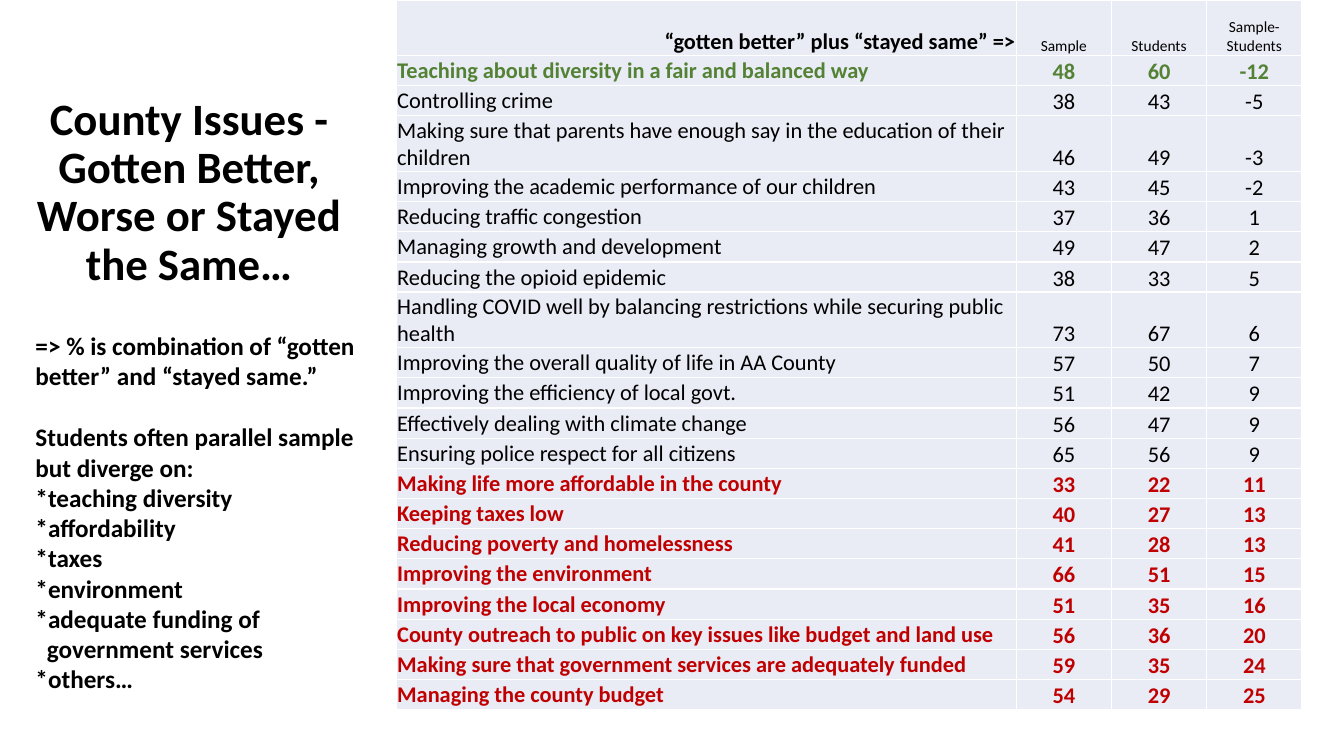
from lxml import etree
from pptx import Presentation
from pptx.dml.color import RGBColor as RGB
from pptx.enum.text import MSO_ANCHOR as Anchor, MSO_AUTO_SIZE as Fit, PP_ALIGN as Align
from pptx.oxml import parse_xml
from pptx.oxml.ns import nsdecls, qn
from pptx.util import Cm, Pt

HUES = {"text": "000000", "better": "548235", "worse": "C00000",
        "cell": "E9EBF5", "edge": "FFFFFF"}
FACE = "Calibri"


def write(para, text, size, hue="text", bold=True, align=Align.LEFT):
    """Put one formatted run of text into a paragraph."""
    run = para.add_run()
    run.text = text
    para.alignment = align
    for name, value in {"name": FACE, "size": Pt(size), "bold": bold}.items():
        setattr(run.font, name, value)
    run.font.color.rgb = RGB.from_string(HUES[hue])


def place(shape, left, top, width, height):
    """Move and size a shape, in centimetres."""
    spot = {"left": left, "top": top, "width": width, "height": height}
    for name, value in spot.items():
        setattr(shape, name, Cm(value))


deck = Presentation()
deck.slide_width, deck.slide_height = Cm(33.87), Cm(19.05)
slide = deck.slides.add_slide(deck.slide_layouts[1])

# Title
title = slide.shapes.title
place(title, 0.28, 1.02, 8.97, 7.7)
frame = title.text_frame
frame.auto_size = Fit.NONE
frame.vertical_anchor = Anchor.MIDDLE
frame.paragraphs[0].line_spacing = 0.9
write(frame.paragraphs[0], "County Issues - Gotten Better, Worse or Stayed the Same…",
      32, align=Align.CENTER)

# Table: issue, sample and students; the last column is their difference
issues = [
    ("Teaching about diversity in a fair and balanced way", 48, 60),
    ("Controlling crime", 38, 43),
    ("Making sure that parents have enough say in the education of their children", 46, 49),
    ("Improving the academic performance of our children", 43, 45),
    ("Reducing traffic congestion", 37, 36),
    ("Managing growth and development", 49, 47),
    ("Reducing the opioid epidemic", 38, 33),
    ("Handling COVID well by balancing restrictions while securing public health", 73, 67),
    ("Improving the overall quality of life in AA County", 57, 50),
    ("Improving the efficiency of local govt.", 51, 42),
    ("Effectively dealing with climate change", 56, 47),
    ("Ensuring police respect for all citizens", 65, 56),
    ("Making life more affordable in the county", 33, 22),
    ("Keeping taxes low", 40, 27),
    ("Reducing poverty and homelessness", 41, 28),
    ("Improving the environment", 66, 51),
    ("Improving the local economy", 51, 35),
    ("County outreach to public on key issues like budget and land use", 56, 36),
    ("Making sure that government services are adequately funded", 59, 35),
    ("Managing the county budget", 54, 29),
]
heads = ["“gotten better” plus “stayed same” =>", "Sample", "Students", "Sample-Students"]
rows = [heads] + [[name, own, peer, own - peer] for name, own, peer in issues]
widths = [15.62, 2.4, 2.4, 2.4]
tall = {0, 3, 8}

grid = slide.shapes.add_table(len(rows), len(heads), Cm(9.99), Cm(0),
                              Cm(sum(widths)), Cm(17.88)).table
grid.first_row = grid.horz_banding = False
for col, width in zip(grid.columns, widths):
    col.width = Cm(width)

insets = {"margin_left": Cm(0.02), "margin_right": Cm(0.02),
          "margin_top": Cm(0.02), "margin_bottom": Cm(0)}
for r, row in enumerate(rows):
    grid.rows[r].height = Cm(1.4 if r in tall else 0.76)
    hue = "text"
    if r and abs(row[-1]) > 10:
        hue = "worse" if row[-1] > 0 else "better"
    for c, value in enumerate(row):
        cell = grid.cell(r, c)
        for name, inset in insets.items():
            setattr(cell, name, inset)
        cell.vertical_anchor = Anchor.MIDDLE if r and not c else Anchor.BOTTOM
        props = cell._tc.get_or_add_tcPr()
        for side in "LRTB":
            props.append(parse_xml(
                f'<a:ln{side} w="12700" {nsdecls("a")}><a:solidFill>'
                f'<a:srgbClr val="{HUES["edge"]}"/></a:solidFill></a:ln{side}>'))
        cell.fill.solid()
        cell.fill.fore_color.rgb = RGB.from_string(HUES["cell"])
        if c:
            align = Align.CENTER
        else:
            align = Align.LEFT if r else Align.RIGHT
        write(cell.text_frame.paragraphs[0], str(value), 16 if r or not c else 11,
              hue, hue != "text" or r == c == 0, align)

# Notes: text, space before in points, indent in centimetres
notes = [
    ("=> % is combination of “gotten better” and “stayed same.”", 0, 0),
    ("Students often parallel sample but diverge on:", 22, 0),
    ("*teaching diversity", 0, 0),
    ("*affordability", 0, 0),
    ("*taxes", 0, 0),
    ("*environment", 0, 0),
    ("*adequate funding of", 0, 0),
    ("government services", 0, 0.29),
    ("*others…", 0, 0),
]
body = slide.placeholders[1]
place(body, 0.64, 8.2, 8.79, 9.5)
frame = body.text_frame
frame.auto_size = Fit.NONE
frame.vertical_anchor = Anchor.TOP
for i, (text, gap, indent) in enumerate(notes):
    para = frame.add_paragraph() if i else frame.paragraphs[0]
    write(para, text, 18)
    para.space_before = Pt(gap)
    props = para._p.get_or_add_pPr()
    props.set("marL", str(Cm(indent)))
    props.set("indent", "0")
    etree.SubElement(props, qn("a:buNone"))

deck.save("out.pptx")
